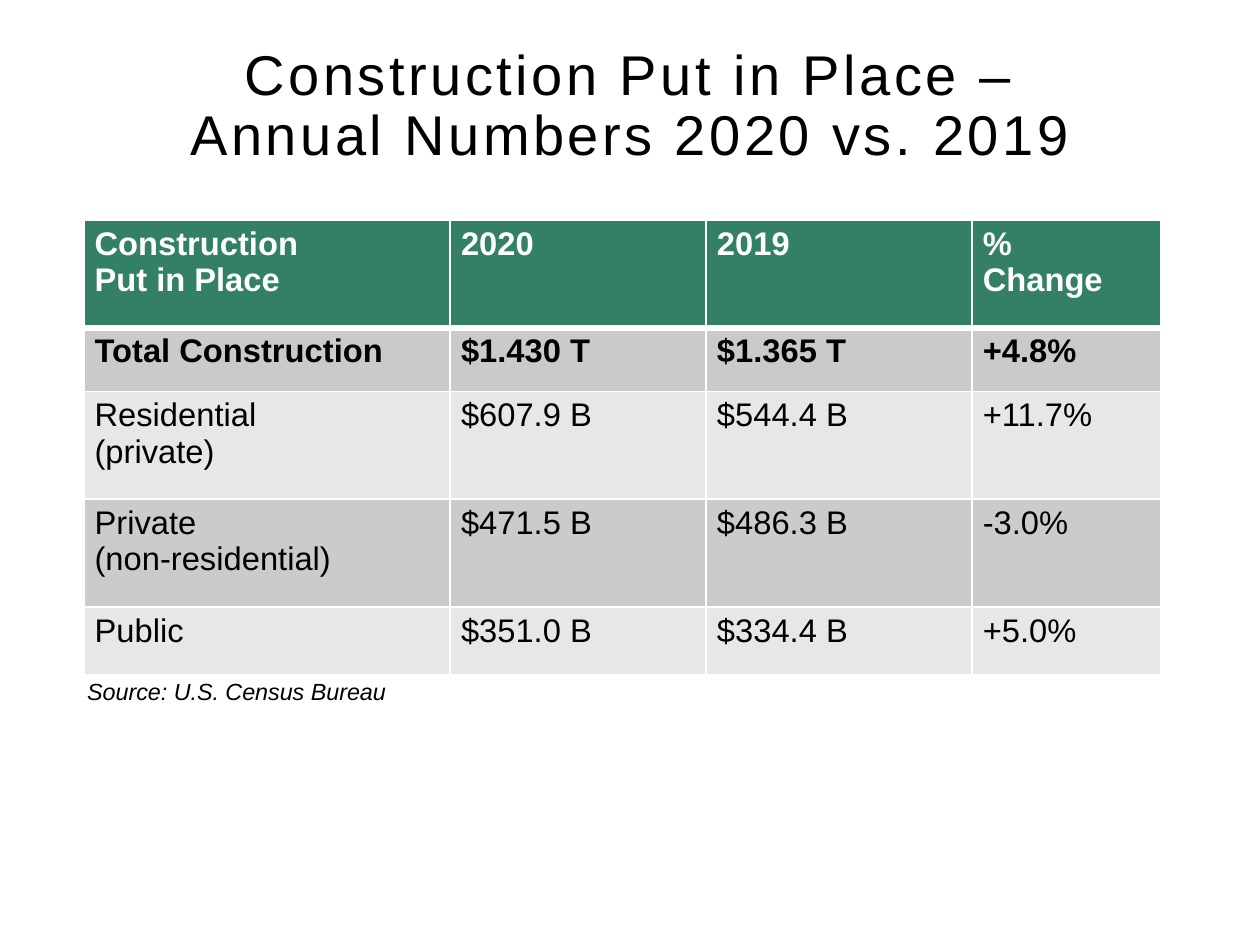
from dataclasses import dataclass

from lxml import etree
from pptx import Presentation
from pptx.dml.color import RGBColor
from pptx.enum.text import MSO_ANCHOR, PP_ALIGN
from pptx.oxml.ns import qn
from pptx.util import Cm, Pt

MIDDLE = MSO_ANCHOR.MIDDLE
CENTER = PP_ALIGN.CENTER


@dataclass(frozen=True)
class Theme:
    font: str = "Arial"
    text: str = "000000"
    white: str = "FFFFFF"
    header: str = "338066"
    total: str = "969696"
    total_alpha: int = 50
    light: str = "E7E7E7"
    dark: str = "CBCBCB"
    title_size: int = 24
    table_size: int = 14
    source_size: int = 10
    title_spacing: float = 1.5
    rule: int = 1
    header_rule: int = 3


class SlideBuilder:
    def __init__(self, slide, theme):
        self.s = slide
        self.theme = theme

    def style(self, tf, size, color, bold=False, italic=False):
        for p in tf.paragraphs:
            for r in p.runs:
                r.font.name = self.theme.font
                r.font.size = Pt(size)
                r.font.bold = bold
                r.font.italic = italic
                r.font.color.rgb = RGBColor.from_string(color)

    def text_box(self, left, top, width, height, text):
        sp = self.s.shapes.add_textbox(Cm(left), Cm(top), Cm(width), Cm(height))
        tf = sp.text_frame
        tf.word_wrap = True
        tf.text = text
        return tf

    def title(self, left, top, width, height, text):
        tf = self.text_box(left, top, width, height, text)
        tf.margin_left = tf.margin_right = tf.margin_top = tf.margin_bottom = 0
        tf.vertical_anchor = MIDDLE
        p = tf.paragraphs[0]
        p.alignment = CENTER
        p.line_spacing = 0.9
        self.style(tf, self.theme.title_size, self.theme.text)
        for r in p.runs:
            r.font._element.set("spc", str(int(self.theme.title_spacing * 100)))

    def source(self, left, top, width, height, text):
        tf = self.text_box(left, top, width, height, text)
        self.style(tf, self.theme.source_size, self.theme.text, italic=True)

    def borders(self, cell, top, bottom):
        tcPr = cell._tc.get_or_add_tcPr()
        rule = self.theme.rule
        for side, width in (("L", rule), ("R", rule), ("T", top), ("B", bottom)):
            ln = etree.SubElement(tcPr, qn("a:ln" + side), w=str(Pt(width)))
            fill = etree.SubElement(ln, qn("a:solidFill"))
            etree.SubElement(fill, qn("a:srgbClr"), val=self.theme.white)

    def fill(self, cell, color, alpha=100):
        cell.fill.solid()
        cell.fill.fore_color.rgb = RGBColor.from_string(color)
        if alpha < 100:
            clr = cell._tc.tcPr.find(".//" + qn("a:srgbClr") + f"[@val='{color}']")
            etree.SubElement(clr, qn("a:alpha"), val=str(alpha * 1000))

    def table(self, left, top, widths, heights, rows):
        t = self.theme
        table = self.s.shapes.add_table(
            len(rows), len(widths), Cm(left), Cm(top),
            Cm(sum(widths)), Cm(sum(heights))).table
        for column, width in zip(table.columns, widths):
            column.width = Cm(width)
        for row, height in zip(table.rows, heights):
            row.height = Cm(height)

        # Header, total row, then alternating bands
        fills = [(t.header,), (t.total, t.total_alpha)]
        fills += [((t.light, t.dark)[i % 2],) for i in range(len(rows) - 2)]
        for i, values in enumerate(rows):
            for j, value in enumerate(values):
                cell = table.cell(i, j)
                cell.margin_left = cell.margin_right = Cm(0.16)
                cell.margin_top = cell.margin_bottom = Cm(0.08)
                cell.text_frame.text = value
                self.style(cell.text_frame, t.table_size,
                           t.white if i == 0 else t.text, bold=i < 2)
                self.borders(cell, t.header_rule if i == 1 else t.rule,
                             t.header_rule if i == 0 else t.rule)
                self.fill(cell, *fills[i])


def main():
    prs = Presentation()
    prs.slide_width, prs.slide_height = Cm(19.05), Cm(14.29)
    slide = SlideBuilder(prs.slides.add_slide(prs.slide_layouts[6]), Theme())

    # Title
    slide.title(0, 0.94, 19.05, 1.37,
                "Construction Put in Place –\vAnnual Numbers 2020 vs. 2019")

    # Source line
    slide.source(1.07, 10.11, 9.5, 0.69, "Source: U.S. Census Bureau")

    # Spending table
    slide.table(
        1.27, 3.33,
        widths=[5.54, 3.87, 4.02, 2.85],
        heights=[1.63, 0.96, 1.63, 1.63, 1.02],
        rows=[
            ["Construction\nPut in Place", "2020", "2019", "%\nChange"],
            ["Total Construction", "$1.430 T", "$1.365 T", "+4.8%"],
            ["Residential\n(private)", "$607.9 B", "$544.4 B", "+11.7%"],
            ["Private\n(non-residential)", "$471.5 B", "$486.3 B", "-3.0%"],
            ["Public", "$351.0 B", "$334.4 B", "+5.0%"],
        ])

    prs.save("out.pptx")


if __name__ == "__main__":
    main()
